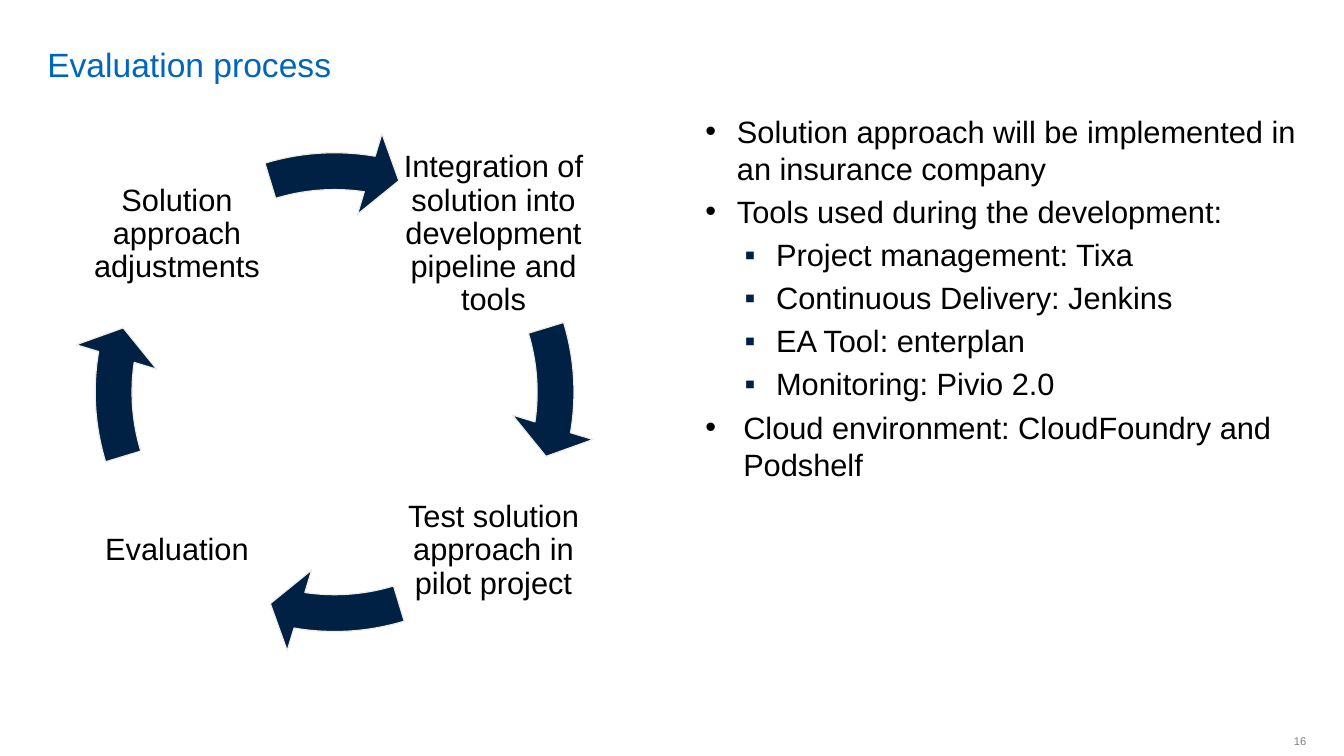
from dataclasses import dataclass

from lxml.etree import SubElement
from pptx import Presentation
from pptx.dml.color import RGBColor as RGB
from pptx.enum.shapes import MSO_SHAPE as Shape
from pptx.enum.text import MSO_ANCHOR as Anchor, PP_ALIGN as Align
from pptx.oxml.ns import qn
from pptx.util import Pt


@dataclass(frozen=True)
class Theme:
    font: str = "Arial"
    title_color: RGB = RGB(0x00, 0x65, 0xBD)
    text_color: RGB = RGB(0, 0, 0)
    accent: RGB = RGB(0x00, 0x21, 0x43)
    outline: RGB = RGB(0xEE, 0xEC, 0xE1)
    muted: RGB = RGB(0x80, 0x80, 0x80)
    title_size: float = 24
    body_size: float = 22
    number_size: float = 8


class SlideBuilder:
    def __init__(self, slide, theme):
        self.slide = slide
        self.theme = theme

    def style(self, paragraph, size, color):
        for run in paragraph.runs:
            run.font.name = self.theme.font
            run.font.size = Pt(size)
            run.font.color.rgb = color

    def frame(self, box, insets, anchor, wrap=True):
        frame = box.text_frame
        frame.word_wrap = wrap
        frame.vertical_anchor = anchor
        (frame.margin_left, frame.margin_top,
         frame.margin_right, frame.margin_bottom) = map(Pt, insets)
        return frame

    def title(self, text, bounds):
        heading = self.slide.shapes.title
        heading.left, heading.top, heading.width, heading.height = map(Pt, bounds)
        frame = self.frame(heading, (7.2, 0, 7.2, 0), Anchor.BOTTOM)
        frame.text = text
        frame.paragraphs[0].alignment = Align.LEFT
        self.style(frame.paragraphs[0], self.theme.title_size, self.theme.title_color)

    def label(self, text, bounds, size, color, align, insets, wrap=True, spacing=1.0):
        box = self.slide.shapes.add_textbox(*map(Pt, bounds))
        frame = self.frame(box, insets, Anchor.MIDDLE, wrap)
        frame.text = text
        paragraph = frame.paragraphs[0]
        paragraph.alignment = align
        paragraph.line_spacing = spacing
        self.style(paragraph, size, color)

    def bullets(self, items, bounds):
        box = self.slide.shapes.add_textbox(*map(Pt, bounds))
        frame = self.frame(box, (7.2, 3.6, 7.2, 3.6), Anchor.TOP)
        for index, (text, level, margin, hanging) in enumerate(items):
            paragraph = frame.paragraphs[0] if index == 0 else frame.add_paragraph()
            paragraph.text = text
            paragraph.level = level
            properties = paragraph._p.get_or_add_pPr()
            properties.set("marL", str(Pt(margin)))
            properties.set("indent", str(-Pt(hanging)))
            marker_color = self.theme.accent if level else self.theme.text_color
            color = SubElement(properties, qn("a:buClr"))
            SubElement(color, qn("a:srgbClr")).set("val", str(marker_color))
            SubElement(properties, qn("a:buFont")).set("typeface", self.theme.font)
            SubElement(properties, qn("a:buChar")).set("char", "▪" if level else "•")
            if index:
                paragraph.space_before = Pt(0.2 * self.theme.body_size)
            self.style(paragraph, self.theme.body_size, self.theme.text_color)

    def cycle_arrow(self, bounds, head_angle, tail_angle):
        arrow = self.slide.shapes.add_shape(Shape.CIRCULAR_ARROW, *map(Pt, bounds))
        arrow.shadow.inherit = False
        for index, value in enumerate((0.07, 4.65, head_angle, tail_angle, 0.08)):
            arrow.adjustments[index] = value
        arrow.fill.solid()
        arrow.fill.fore_color.rgb = self.theme.accent
        arrow.line.color.rgb = self.theme.outline
        arrow.line.width = Pt(0.85)


def main():
    deck = Presentation()
    deck.slide_width, deck.slide_height = Pt(960), Pt(540)
    theme = Theme()
    page = SlideBuilder(deck.slides.add_slide(deck.slide_layouts[5]), theme)

    page.title("Evaluation process", (26.6, 3.6, 833.8, 56.9))

    # Approach and tools: text, level, left margin, hanging indent
    page.bullets([
        ("Solution approach will be implemented in an insurance company", 0, 22.5, 22.5),
        ("Tools used during the development:", 0, 22.5, 22.5),
        ("Project management: Tixa", 1, 50.5, 22.5),
        ("Continuous Delivery: Jenkins", 1, 50.5, 22.5),
        ("EA Tool: enterplan", 1, 50.5, 22.5),
        ("Monitoring: Pivio 2.0", 1, 50.5, 22.5),
        ("Cloud environment: CloudFoundry and Podshelf", 0, 27, 27),
    ], (496.8, 77, 436.8, 425.5))

    # Slide number
    page.label("16", (907.2, 517.7, 25.9, 23), theme.number_size, theme.muted,
               Align.RIGHT, (7.2, 3.6, 0, 3.6), wrap=False)

    # Evaluation cycle, clockwise from the top right
    steps = [
        ("Integration of solution into development pipeline and tools", 1, 0),
        ("Test solution approach in pilot project", 1, 1),
        ("Evaluation", 0, 1),
        ("Solution approach adjustments", 0, 0),
    ]
    node_left, node_top, node_size, node_pitch = 59.8, 100.8, 133.2, 226.1
    ring = (51.1, 92.2, 375.8, 375.8)
    quarter_turn, full_turn = 54, 216  # adjustment units of 1/0.6 degree
    for index, (step, column, row) in enumerate(steps):
        corner = (node_left + column * node_pitch, node_top + row * node_pitch)
        page.label(step, (*corner, node_size, node_size), theme.body_size,
                   theme.text_color, Align.CENTER, (2.2,) * 4, spacing=0.9)
        turn = index * quarter_turn
        page.cycle_arrow(ring, 5.49 + turn, (205.85 + turn) % full_turn)

    deck.save("out.pptx")


if __name__ == "__main__":
    main()
